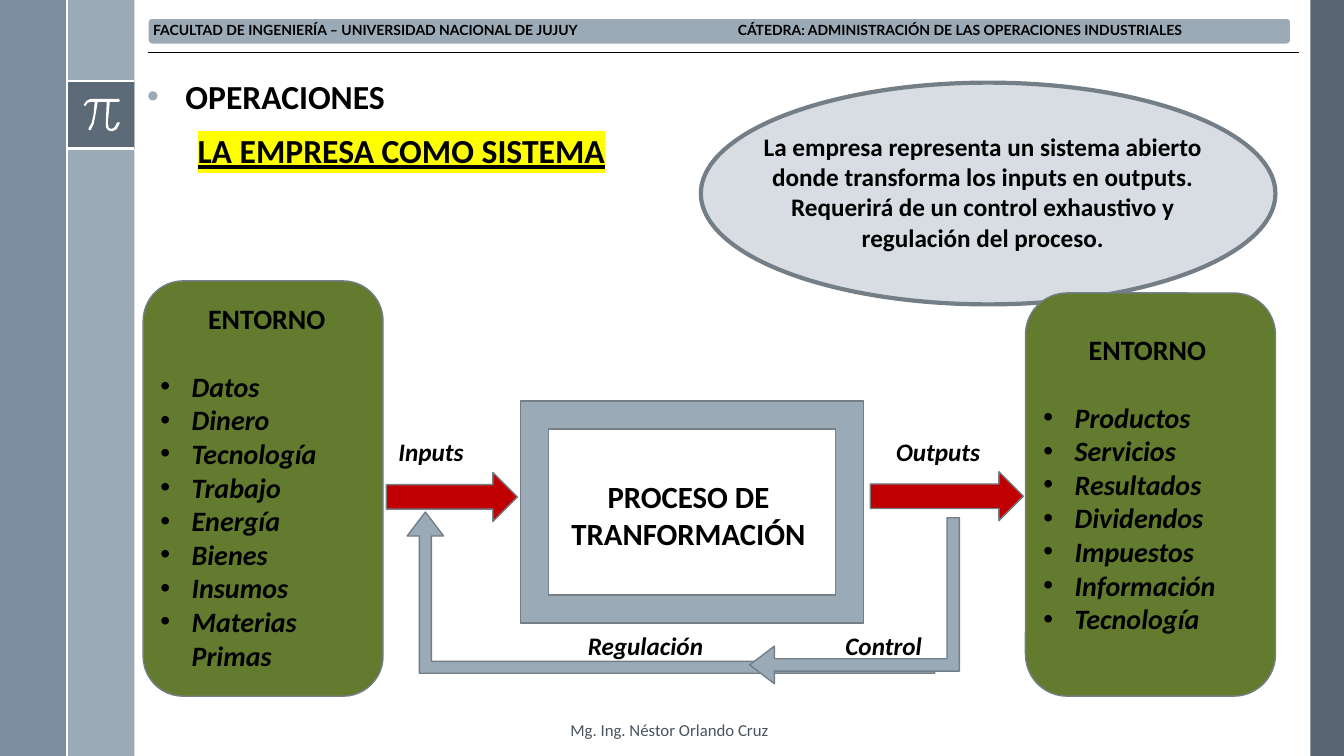
from lxml.etree import SubElement
from pptx import Presentation
from pptx.dml.color import RGBColor
from pptx.enum.shapes import MSO_CONNECTOR as Connector, MSO_SHAPE as Shape
from pptx.enum.text import MSO_ANCHOR as Anchor, MSO_AUTO_SIZE as AutoSize, PP_ALIGN as Align
from pptx.oxml.ns import qn
from pptx.util import Emu, Inches, Pt

COLUMNS, ROWS = 20, 11.25
CELL = Inches(13.333) / COLUMNS

STEEL, SLATE, BLUE_GRAY, OUTLINE = "9BAAB7", "475562", "6A8093", "737E87"
GREEN, RED, PALE, WHITE, BLACK = "637B2E", "C00000", "D7DDE2", "FFFFFF", "000000"

# Outline of the pi sign, in hundredths of an inch
PI_POINTS = [
    (118, 98), (90, 98), (86, 100), (83, 104), (84, 105), (85, 105), (87, 102),
    (90, 101), (94, 101), (93, 113), (91, 122), (88, 127), (88, 129), (90, 129),
    (93, 123), (95, 113), (97, 101), (106, 101), (105, 122), (105, 126),
    (107, 129), (110, 130), (112, 130), (116, 128), (119, 122), (118, 121),
    (116, 122), (114, 126), (111, 128), (108, 127), (107, 122), (109, 101),
    (118, 101), (119, 100),
]
INPUTS = ["Datos", "Dinero", "Tecnología", "Trabajo", "Energía", "Bienes",
          "Insumos", "Materias Primas"]
OUTPUTS = ["Productos", "Servicios", "Resultados", "Dividendos", "Impuestos",
           "Información", "Tecnología"]


def grid(*cells):
    """Turn counts of grid cells into lengths."""
    return [Emu(round(cell * CELL)) for cell in cells]


def paint(color_format, color):
    color_format.rgb = RGBColor.from_string(color)


def style(shape, fill, line=None, width=1, alpha=None):
    shape.shadow.inherit = False
    shape.fill.solid()
    paint(shape.fill.fore_color, fill)
    if alpha:
        color = shape.element.spPr.find(qn("a:solidFill"))[0]
        SubElement(color, qn("a:alpha"), val=str(alpha * 1000))
    if line:
        paint(shape.line.color, line)
        shape.line.width = Pt(width)
    else:
        shape.line.fill.background()


def add_block(slide, kind, place, fill, line=None, **look):
    shape = slide.shapes.add_shape(kind, *grid(*place))
    style(shape, fill, line, **look)
    return shape


def add_rule(slide, ends, color, width):
    rule = slide.shapes.add_connector(Connector.STRAIGHT, *grid(*ends))
    paint(rule.line.color, color)
    rule.line.width = Pt(width)
    SubElement(rule.element.spPr, qn("a:effectLst"))


def add_bullet(paragraph, indent, color=BLACK):
    properties = paragraph._p.get_or_add_pPr()
    properties.set("marL", str(Inches(indent)))
    properties.set("indent", str(-Inches(indent)))
    bullet_color = SubElement(properties, qn("a:buClr"))
    SubElement(bullet_color, qn("a:srgbClr"), val=color)
    SubElement(properties, qn("a:buFont"), typeface="Arial")
    SubElement(properties, qn("a:buChar"), char="•")


def write(paragraph, text, size=18, color=BLACK, font="Calibri", bold=True,
          italic=False, underline=None, highlight=None, align=Align.LEFT):
    paragraph.alignment = align
    run = paragraph.add_run()
    run.text = text
    run.font.size, run.font.name = Pt(size), font
    run.font.bold, run.font.italic, run.font.underline = bold, italic, underline
    paint(run.font.color, color)
    if highlight:
        properties = run.font._element
        marker = SubElement(properties, qn("a:highlight"))
        SubElement(marker, qn("a:srgbClr"), val=highlight)
        properties.find(qn("a:solidFill")).addnext(marker)


def add_text(slide, place, text, **text_format):
    frame = slide.shapes.add_textbox(*grid(*place)).text_frame
    frame.word_wrap = True
    write(frame.paragraphs[0], text, **text_format)
    return frame


def add_sidebars(slide):
    for place, color, alpha in [((19.5, 0, 0.5, ROWS), SLATE, 90),
                                ((1, 0, 1, ROWS), STEEL, None),
                                ((0, 0, 1, ROWS), BLUE_GRAY, 88),
                                ((1, 1.21, 1, 1), SLATE, 75)]:
        add_block(slide, Shape.RECTANGLE, place, color, alpha=alpha)
    for ends in [(1, 1.21, 2, 1.21), (1, 2.21, 2, 2.21), (1, 0, 1, ROWS)]:
        add_rule(slide, ends, WHITE, 1.5)
    builder = slide.shapes.build_freeform(*PI_POINTS[0], scale=Inches(0.01))
    builder.add_line_segments(PI_POINTS[1:], close=True)
    style(builder.convert_to_shape(), WHITE)


def add_header(slide):
    band = add_block(slide, Shape.ROUNDED_RECTANGLE, (2.2, 0.27, 17.01, 0.39), STEEL, WHITE)
    frame = band.text_frame
    frame.word_wrap = True
    frame.vertical_anchor = Anchor.MIDDLE
    frame.margin_left = frame.margin_right = Inches(0.04)
    frame.margin_top = frame.margin_bottom = Inches(0.04)
    paragraph = frame.paragraphs[0]
    paragraph.line_spacing = 0.9
    write(paragraph, "FACULTAD DE INGENIERÍA – UNIVERSIDAD NACIONAL DE JUJUY\t"
          "CÁTEDRA: ADMINISTRACIÓN DE LAS OPERACIONES INDUSTRIALES", size=10, font="Lato")
    tabs = SubElement(paragraph._p.get_or_add_pPr(), qn("a:tabLst"))
    SubElement(tabs, qn("a:tab"), pos=str(Inches(5.8)), algn="l")
    add_rule(slide, (2.2, 0.78, 19.33, 0.78), BLACK, 0.5)


def fill_title(slide):
    title = slide.shapes.title
    title.left, title.top, title.width, title.height = grid(2.04, 1.05, 7.94, 1.7)
    frame = title.text_frame
    frame.word_wrap = True
    frame.auto_size = AutoSize.NONE
    frame.vertical_anchor = Anchor.TOP
    topic, subject = frame.paragraphs[0], frame.add_paragraph()
    topic.space_before = subject.space_before = Pt(10)
    write(topic, "OPERACIONES", size=24)
    add_bullet(topic, 0.38, STEEL)
    write(subject, "LA EMPRESA COMO SISTEMA", size=24, underline=True, highlight="FFFF00")
    subject._p.get_or_add_pPr().set("marL", str(Inches(0.5)))


def add_environment(slide, place, text_place, items):
    add_block(slide, Shape.ROUNDED_RECTANGLE, place, GREEN, OUTLINE)
    frame = add_text(slide, text_place, "ENTORNO", size=20, align=Align.CENTER)
    frame.paragraphs[0].space_after = Pt(24)
    for item in items:
        paragraph = frame.add_paragraph()
        write(paragraph, item, size=20, italic=True)
        add_bullet(paragraph, 0.31)


def add_feedback_arrow(slide, place, rotation=0):
    arrow = add_block(slide, Shape.BENT_UP_ARROW, place, STEEL, OUTLINE)
    for index, share in enumerate([0.074, 0.113, 0.149]):
        arrow.adjustments[index] = share
    arrow.rotation = rotation
    arrow.element.spPr.find(qn("a:xfrm")).set("flipH", "1")


def main():
    presentation = Presentation()
    presentation.slide_width, presentation.slide_height = grid(COLUMNS, ROWS)
    slide = presentation.slides.add_slide(presentation.slide_layouts[5])

    add_sidebars(slide)
    add_text(slide, (8.34, 10.63, 4.84, 0.45), "Mg. Ing. Néstor Orlando Cruz",
             size=12, color="465562", bold=False)
    add_header(slide)
    fill_title(slide)

    add_block(slide, Shape.OVAL, (10.43, 1.23, 8.55, 3.3), PALE, OUTLINE, width=3)
    add_text(slide, (10.8, 1.88, 7.65, 1.96),
             "La empresa representa un sistema abierto donde transforma los inputs en "
             "outputs. Requerirá de un control exhaustivo y regulación del proceso.",
             align=Align.CENTER)

    add_environment(slide, (2.13, 4.18, 3.57, 6.18), (2.24, 4.42, 3.46, 5.7), INPUTS)
    add_block(slide, Shape.FRAME, (7.75, 5.97, 5.1, 3.3), STEEL, OUTLINE)
    add_text(slide, (8.07, 7.04, 4.35, 1.26), "PROCESO DE TRANFORMACIÓN",
             size=22, align=Align.CENTER)
    add_environment(slide, (15.26, 4.36, 3.72, 6), (15.38, 4.88, 3.39, 4.7), OUTPUTS)

    for place in [(5.75, 7.03, 1.95, 0.73), (12.95, 7.02, 2.28, 0.73)]:
        add_block(slide, Shape.RIGHT_ARROW, place, RED, OUTLINE)
    add_feedback_arrow(slide, (6.06, 7.62, 7.85, 2.4))
    add_feedback_arrow(slide, (11.48, 7.38, 2.47, 3.12), rotation=270)
    for label, left, top, width in [("Inputs", 5.63, 6.42, 1.57),
                                    ("Outputs", 13.02, 6.42, 1.88),
                                    ("Control", 12.21, 9.3, 1.88),
                                    ("Regulación", 8.25, 9.3, 2.71)]:
        add_text(slide, (left, top, width, 0.6), label, italic=True, align=Align.CENTER)

    presentation.save("out.pptx")


if __name__ == "__main__":
    main()
